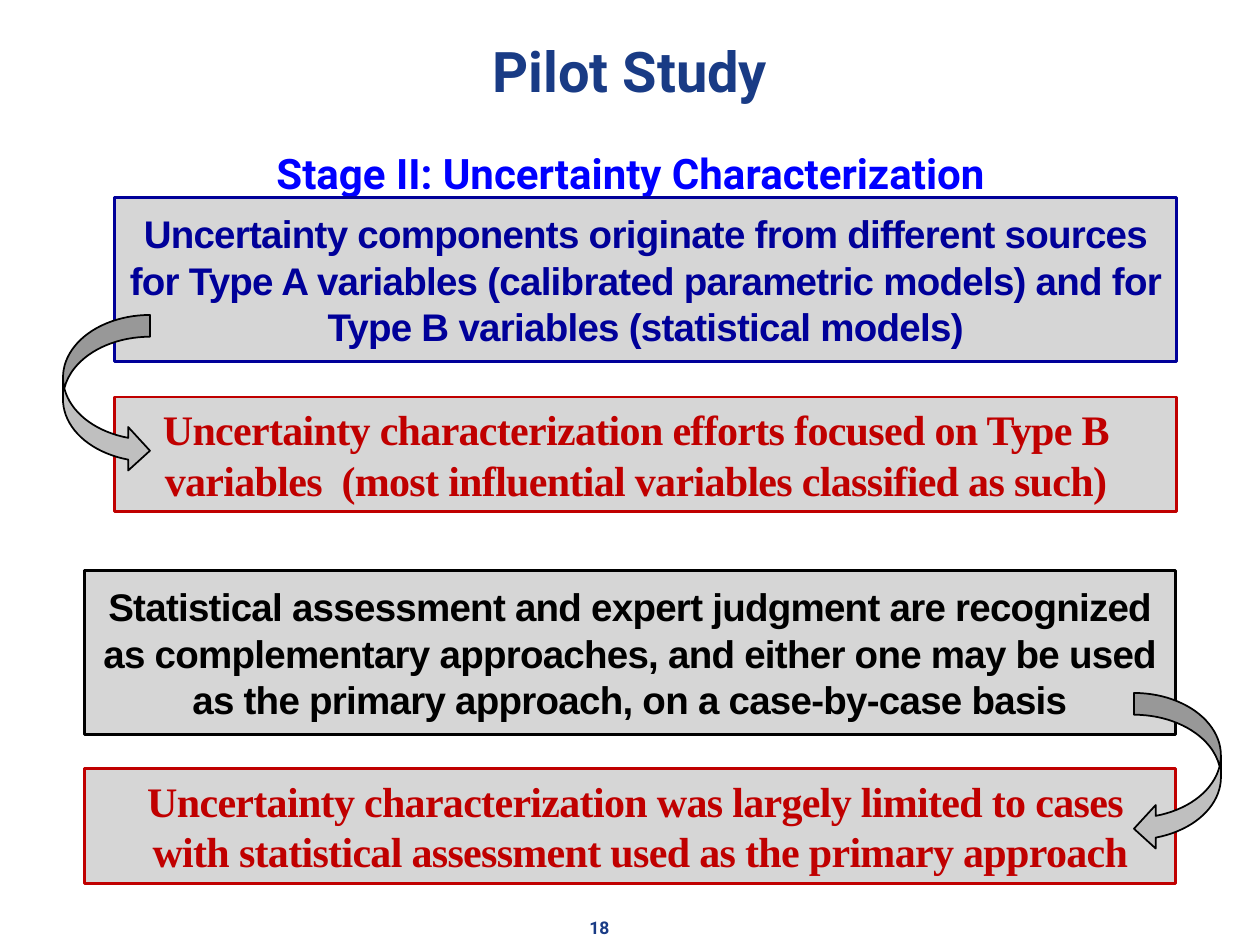
from pptx import Presentation
from pptx.dml.color import RGBColor
from pptx.enum.shapes import MSO_SHAPE
from pptx.enum.text import MSO_ANCHOR, MSO_AUTO_SIZE, PP_ALIGN
from pptx.oxml.ns import qn
from pptx.util import Inches, Pt

HEADING = RGBColor(0x19, 0x3B, 0x85)
SUBHEADING = RGBColor(0x00, 0x00, 0xFF)
NAVY = RGBColor(0x00, 0x00, 0x99)
RED = RGBColor(0xC0, 0x00, 0x00)
BLACK = RGBColor(0x00, 0x00, 0x00)
PANEL = RGBColor(0xD6, 0xD6, 0xD6)
ARROW = RGBColor(0xBF, 0xBF, 0xBF)

HEAD_FONT, FACT_FONT, RESULT_FONT = "Roboto", "Arial", "Times New Roman"
MARGINS = (0.1, 0.05, 0.1, 0.05)


class SlideBuilder:
    """Holds the current slide and its shared style."""

    def __init__(self, page):
        self.page = page

    def place(self, shape, position):
        names = ("left", "top", "width", "height")
        for name, value in zip(names, position):
            setattr(shape, name, Inches(value))

    def fill_text(self, shape, lines, name, size, color, margins=MARGINS,
                  anchor=MSO_ANCHOR.MIDDLE, tracking=None, **paragraph_format):
        frame = shape.text_frame
        frame.text = "\n".join(lines)
        frame_format = {"word_wrap": True, "auto_size": MSO_AUTO_SIZE.NONE,
                        "vertical_anchor": anchor}
        sides = ("margin_left", "margin_top", "margin_right", "margin_bottom")
        frame_format.update(zip(sides, map(Inches, margins)))
        for key, value in frame_format.items():
            setattr(frame, key, value)
        paragraph_format = {"alignment": PP_ALIGN.CENTER, "space_before": Pt(0),
                            **paragraph_format}
        for para in frame.paragraphs:
            for key, value in paragraph_format.items():
                setattr(para, key, value)
            for span in para.runs:
                font_format = {"name": name, "size": Pt(size), "bold": True}
                for key, value in font_format.items():
                    setattr(span.font, key, value)
                span.font.color.rgb = color
                if tracking is not None:
                    span.font._element.set("spc", str(int(tracking * 100)))

    def heading(self, index, position, text, size, color, **options):
        box = self.page.placeholders[index]
        self.place(box, position)
        self.fill_text(box, [text], HEAD_FONT, size, color, line_spacing=0.85,
                       **options)
        # Headings carry no bullet or hanging indent
        properties = box.text_frame.paragraphs[0]._p.get_or_add_pPr()
        properties.set("marL", "0")
        properties.set("indent", "0")
        properties.append(properties.makeelement(qn("a:buNone"), {}))

    def shape(self, kind, position, fill, outline, weight):
        shape = self.page.shapes.add_shape(kind, *map(Inches, position))
        shape.shadow.inherit = False
        shape.fill.solid()
        shape.fill.fore_color.rgb = fill
        shape.line.color.rgb = outline
        shape.line.width = Pt(weight)
        return shape

    def panel(self, position, lines, font, size, color, margins=MARGINS):
        box = self.shape(MSO_SHAPE.RECTANGLE, position, PANEL, color, 1.5)
        self.fill_text(box, lines, font, size, color, margins, tracking=-0.4)

    def curved_arrow(self, left, top, mirrored=False):
        arrow = self.shape(MSO_SHAPE.CURVED_RIGHT_ARROW, (left, top, 0.69, 1.25),
                           ARROW, BLACK, 1)
        if mirrored:
            arrow._element.spPr.xfrm.set("flipH", "1")

    def page_number(self, position, text):
        box = self.page.shapes.add_textbox(*map(Inches, position))
        self.fill_text(box, [text], HEAD_FONT, 10, HEADING,
                       anchor=MSO_ANCHOR.TOP, alignment=PP_ALIGN.LEFT)


def main():
    deck = Presentation()
    deck.slide_width, deck.slide_height = Inches(10), Inches(7.5)
    builder = SlideBuilder(deck.slides.add_slide(deck.slide_layouts[1]))

    # Title, stage heading and page number
    builder.page_number((4.58, 7.23, 0.49, 0.27), "18")
    builder.heading(0, (0, 0, 10, 1.2), "Pilot Study", 32, HEADING,
                    margins=(0.05,) * 4)
    builder.heading(1, (1.37, 1.18, 7.27, 0.46),
                    "Stage II: Uncertainty Characterization", 24, SUBHEADING,
                    anchor=MSO_ANCHOR.TOP)

    # Sources of uncertainty and their consequence
    builder.panel((0.91, 1.57, 8.43, 1.3),
                  ["Uncertainty components originate from different sources for "
                   "Type A variables (calibrated parametric models) and for "
                   "Type B variables (statistical models)"],
                  FACT_FONT, 22, NAVY)
    builder.panel((0.91, 3.15, 8.43, 0.91),
                  ["Uncertainty characterization efforts focused on Type B "
                   "variables  (most influential variables classified as such)"],
                  RESULT_FONT, 24, RED, (0.04, 0.05, 0.2, 0.05))

    # Assessment approaches and their consequence
    builder.panel((0.67, 4.53, 8.66, 1.3),
                  ["Statistical assessment and expert judgment are recognized as "
                   "complementary approaches, and either one may be used as the "
                   "primary approach, on a case-by-case basis"],
                  FACT_FONT, 22, BLACK)
    builder.panel((0.67, 6.1, 8.66, 0.91),
                  ["Uncertainty characterization was largely limited to cases ",
                   "with statistical assessment used as the primary approach"],
                  RESULT_FONT, 24, RED, (0.2, 0.05, 0.04, 0.05))

    # Arrows from each finding to its consequence
    builder.curved_arrow(0.5, 2.5)
    builder.curved_arrow(9, 5.5, mirrored=True)

    deck.save("out.pptx")


if __name__ == "__main__":
    main()
